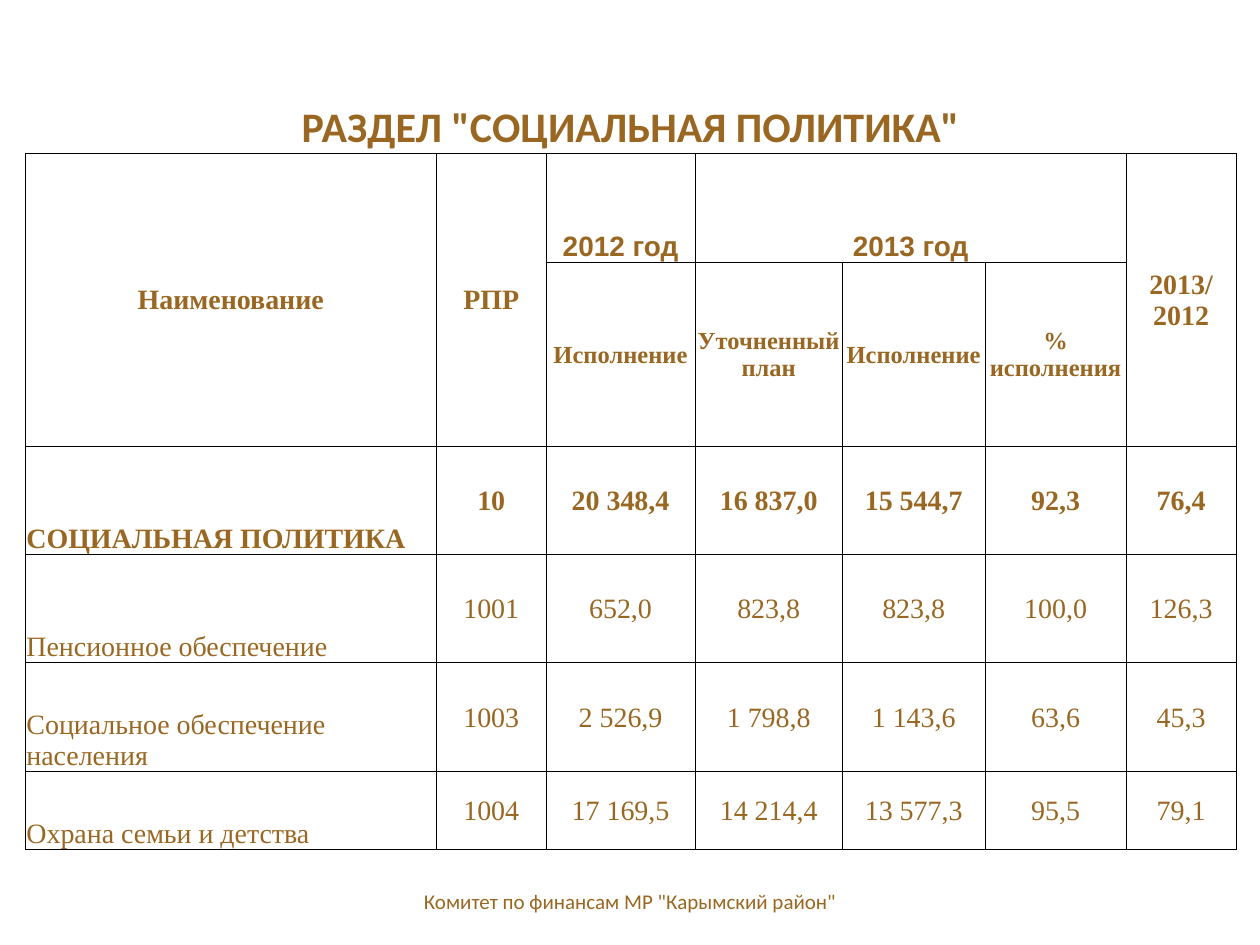
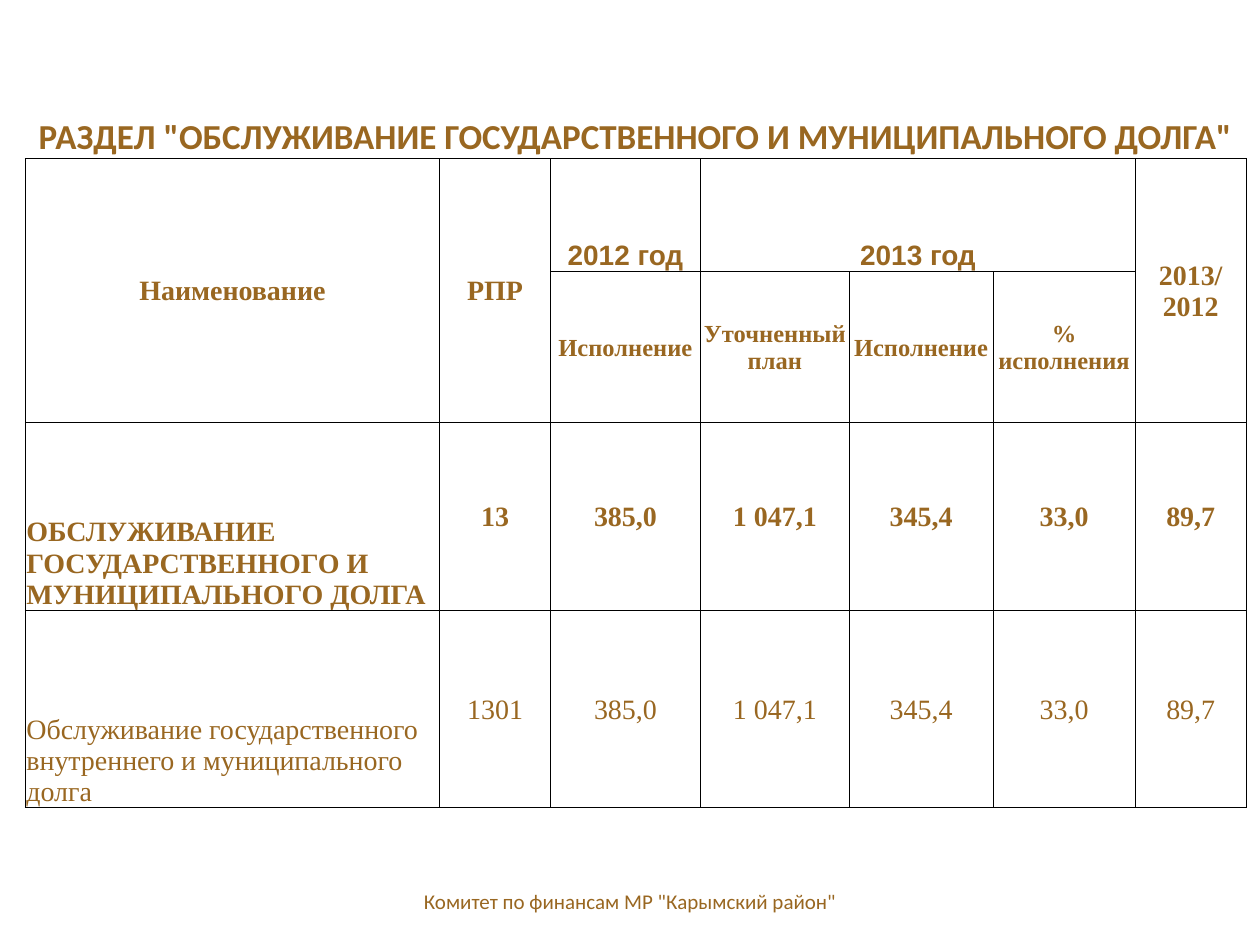
from lxml import etree
from pptx import Presentation
from pptx.dml.color import RGBColor
from pptx.enum.text import MSO_ANCHOR, PP_ALIGN
from pptx.oxml.ns import qn
from pptx.util import Inches, Pt

MIDDLE, BOTTOM = MSO_ANCHOR.MIDDLE, MSO_ANCHOR.BOTTOM
LEFT, CENTER = PP_ALIGN.LEFT, PP_ALIGN.CENTER

SLIDE_W, SLIDE_H = 10, 7.5
BROWN, BLACK = "996721", "000000"
HEADING_FONT, BODY_FONT, YEAR_FONT = "Calibri", "Times New Roman", "Arial"
BORDER_PT = 0.5
CELL_MARGINS = {"margin_left": Inches(0.01), "margin_right": Inches(0.01),
                "margin_top": Inches(0.01), "margin_bottom": 0}

# Column weights: name, code, 2012, three for 2013, ratio
COLUMNS = [3.26, 0.87, 1.18, 1.17, 1.13, 1.12, 0.87]
FOOTER = 'Комитет по финансам МР "Карымский район"'
FOOTER_BOX = (0.319, 0.927, 0.362, 0.053)

# Header cells: row, column, text, font, size, anchor
HEADER = [
    (1, 0, "Наименование", BODY_FONT, 16, MIDDLE),
    (1, 1, "РПР", BODY_FONT, 16, MIDDLE),
    (1, 2, "2012 год", YEAR_FONT, 16, BOTTOM),
    (1, 3, "2013 год", YEAR_FONT, 16, BOTTOM),
    (1, 6, "2013/ 2012", BODY_FONT, 16, MIDDLE),
    (2, 2, "Исполнение", BODY_FONT, 14, MIDDLE),
    (2, 3, "Уточненный план", BODY_FONT, 14, MIDDLE),
    (2, 4, "Исполнение", BODY_FONT, 14, MIDDLE),
    (2, 5, "% исполнения", BODY_FONT, 14, MIDDLE),
]
# Merged areas: first and last cell
MERGES = [((0, 0), (0, 6)), ((1, 0), (2, 0)), ((1, 1), (2, 1)),
          ((1, 3), (1, 5)), ((1, 6), (2, 6))]

SECTIONS = [
    {
        "heading": 'РАЗДЕЛ "СОЦИАЛЬНАЯ ПОЛИТИКА"',
        "heading_size": 24,
        "box": (0.02, 0.048, 0.961, 0.851),
        "rows": [0.86, 0.86, 1.46, 0.86, 0.86, 0.86, 0.62],
        "budget": [
            ["СОЦИАЛЬНАЯ ПОЛИТИКА", "10", "20 348,4", "16 837,0", "15 544,7", "92,3", "76,4"],
            ["Пенсионное обеспечение", "1001", "652,0", "823,8", "823,8", "100,0", "126,3"],
            ["Социальное обеспечение населения", "1003", "2 526,9", "1 798,8", "1 143,6",
             "63,6", "45,3"],
            ["Охрана семьи и детства", "1004", "17 169,5", "14 214,4", "13 577,3", "95,5", "79,1"],
        ],
    },
    {
        "heading": 'РАЗДЕЛ "ОБСЛУЖИВАНИЕ ГОСУДАРСТВЕННОГО И МУНИЦИПАЛЬНОГО ДОЛГА"',
        "heading_size": 20,
        "box": (0.02, 0.048, 0.969, 0.807),
        "rows": [0.9, 0.9, 1.2, 1.49, 1.57],
        "budget": [
            ["ОБСЛУЖИВАНИЕ ГОСУДАРСТВЕННОГО И МУНИЦИПАЛЬНОГО ДОЛГА", "13", "385,0", "1 047,1",
             "345,4", "33,0", "89,7"],
            ["Обслуживание государственного внутреннего и муниципального долга", "1301", "385,0",
             "1 047,1", "345,4", "33,0", "89,7"],
        ],
    },
]


def color(hex_value):
    return RGBColor.from_string(hex_value)


def place(shares):
    """Turn shares of the slide into left, top, width, height."""
    return [Inches(share * side) for share, side in zip(shares, (SLIDE_W, SLIDE_H) * 2)]


def write(frame, text, font, size, bold=False, align=CENTER):
    paragraph = frame.paragraphs[0]
    paragraph.alignment = align
    run = paragraph.add_run()
    run.text = text
    run.font.color.rgb = color(BROWN)
    for key, value in {"name": font, "size": Pt(size), "bold": bold}.items():
        setattr(run.font, key, value)


def fill_cell(cell, text, font, size, anchor, bold=True, align=CENTER):
    cell.vertical_anchor = anchor
    write(cell.text_frame, text, font, size, bold, align)


def frame_cell(cell, sides):
    """Draw the named sides (L, R, T, B), hide the rest and clear the fill."""
    properties = cell._tc.get_or_add_tcPr()
    for side in "LRTB":
        line = etree.SubElement(properties, qn(f"a:ln{side}"), w=str(Pt(BORDER_PT)))
        if side in sides:
            fill = etree.SubElement(line, qn("a:solidFill"))
            etree.SubElement(fill, qn("a:srgbClr"), val=BLACK)
        else:
            etree.SubElement(line, qn("a:noFill"))
    cell.fill.background()


def set_grid(parts, weights, total, attribute):
    for part, weight in zip(parts, weights):
        setattr(part, attribute, int(total * weight / sum(weights)))


def add_budget_table(slide, section):
    box = place(section["box"])
    heights = section["rows"]
    table = slide.shapes.add_table(len(heights), len(COLUMNS), *box).table
    table.first_row = table.horz_banding = False
    set_grid(table.columns, COLUMNS, box[2], "width")
    set_grid(table.rows, heights, box[3], "height")

    # Borders and margins; the heading row keeps only its lower edge
    for row_index, row in enumerate(table.rows):
        for cell in row.cells:
            frame_cell(cell, "LRTB" if row_index else "B")
            for key, value in CELL_MARGINS.items():
                setattr(cell, key, value)
    for first, last in MERGES:
        table.cell(*first).merge(table.cell(*last))

    # Heading and column names
    fill_cell(table.cell(0, 0), section["heading"], HEADING_FONT,
              section["heading_size"], BOTTOM)
    for row, column, *content in HEADER:
        fill_cell(table.cell(row, column), *content)

    # Budget lines; the first one is the section total
    for row, entries in enumerate(section["budget"], start=3):
        for column, entry in enumerate(entries):
            anchor, align = (MIDDLE, CENTER) if column else (BOTTOM, LEFT)
            fill_cell(table.cell(row, column), entry, BODY_FONT, 16, anchor,
                      bold=row == 3, align=align)


def add_footer(slide):
    frame = slide.shapes.add_textbox(*place(FOOTER_BOX)).text_frame
    frame.word_wrap = True
    frame.vertical_anchor = MIDDLE
    write(frame, FOOTER, HEADING_FONT, 12)


def main():
    deck = Presentation()
    deck.slide_width, deck.slide_height = Inches(SLIDE_W), Inches(SLIDE_H)
    blank = deck.slide_layouts[6]
    for section in SECTIONS:
        slide = deck.slides.add_slide(blank)
        add_budget_table(slide, section)
        add_footer(slide)
    deck.save("out.pptx")


if __name__ == "__main__":
    main()
